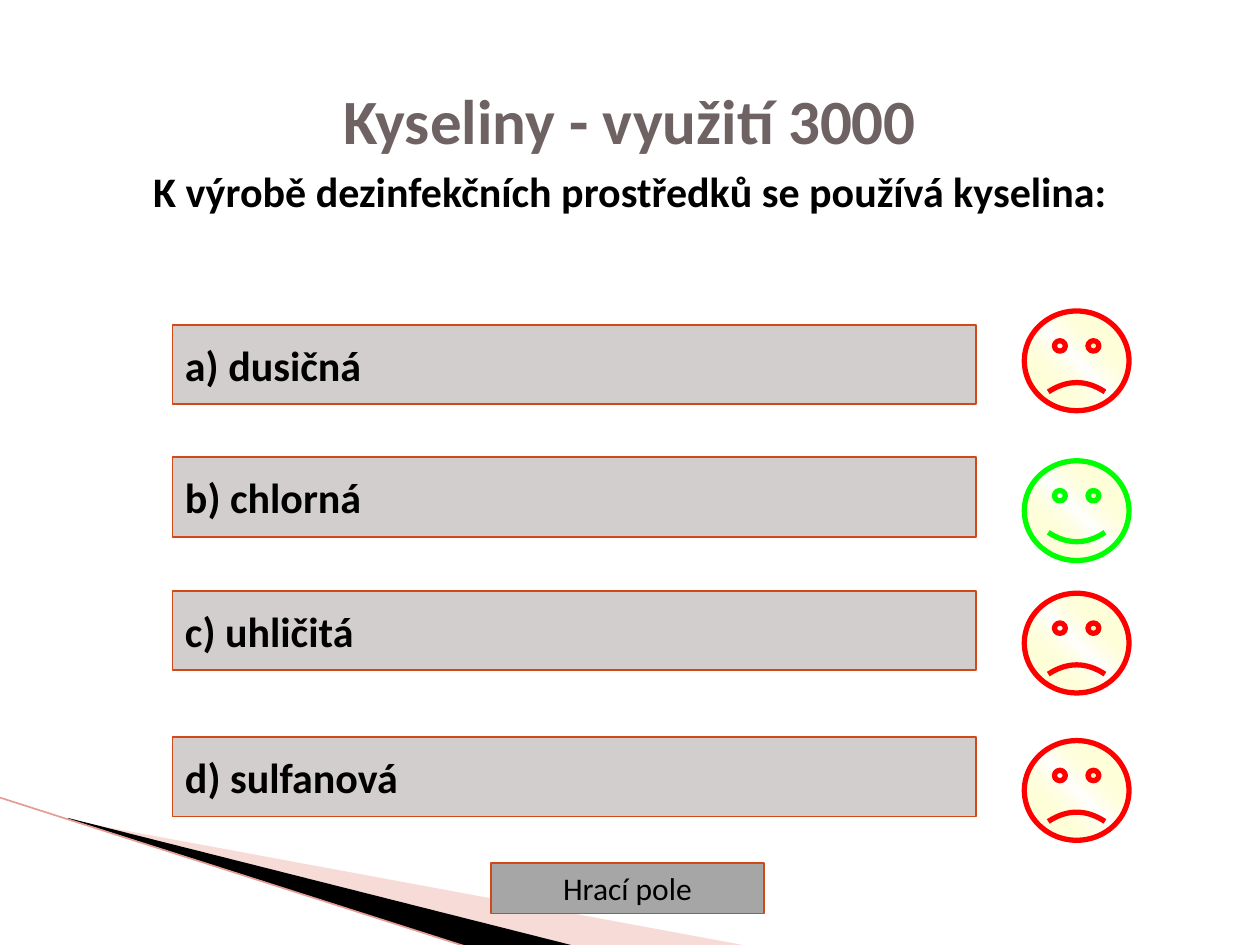
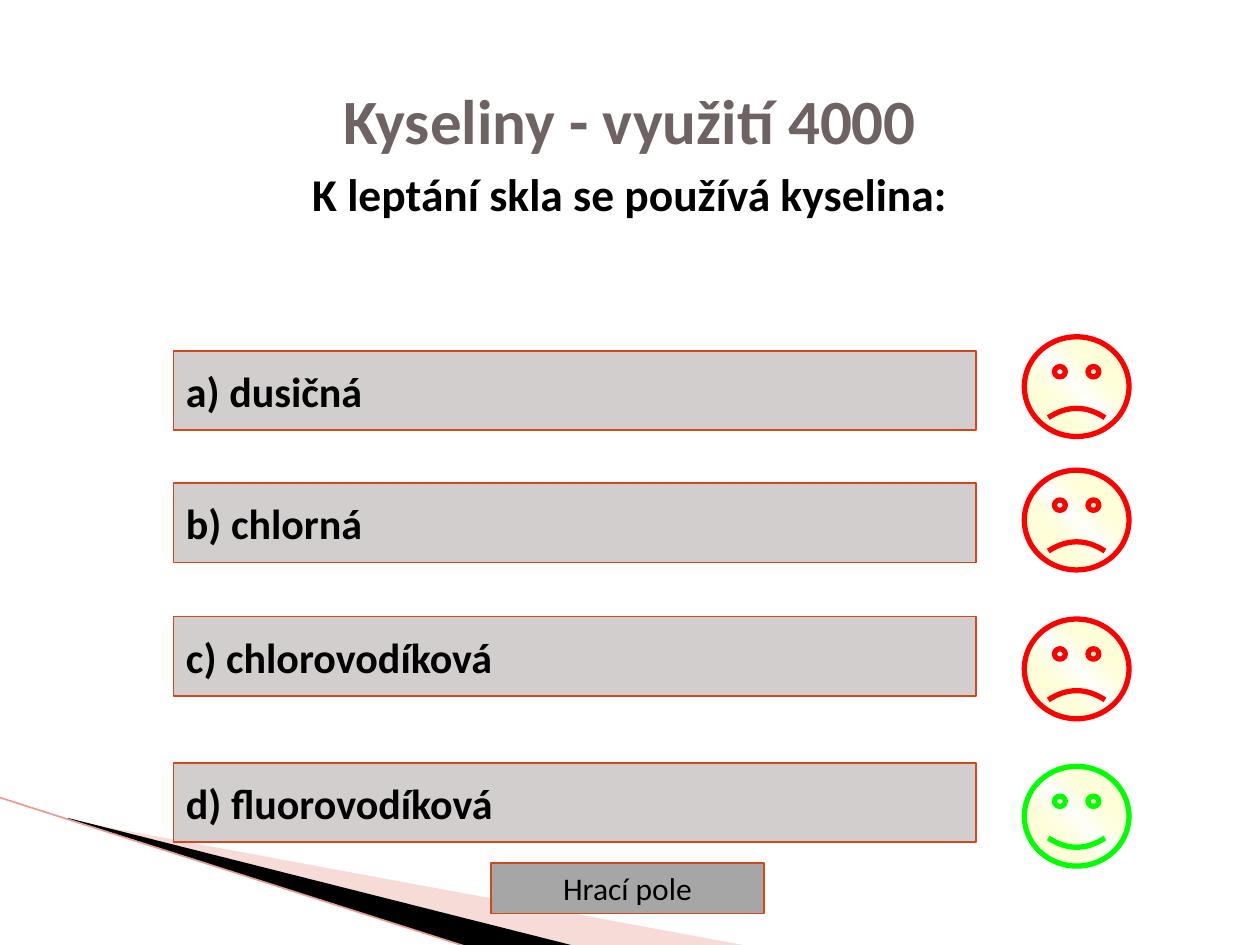
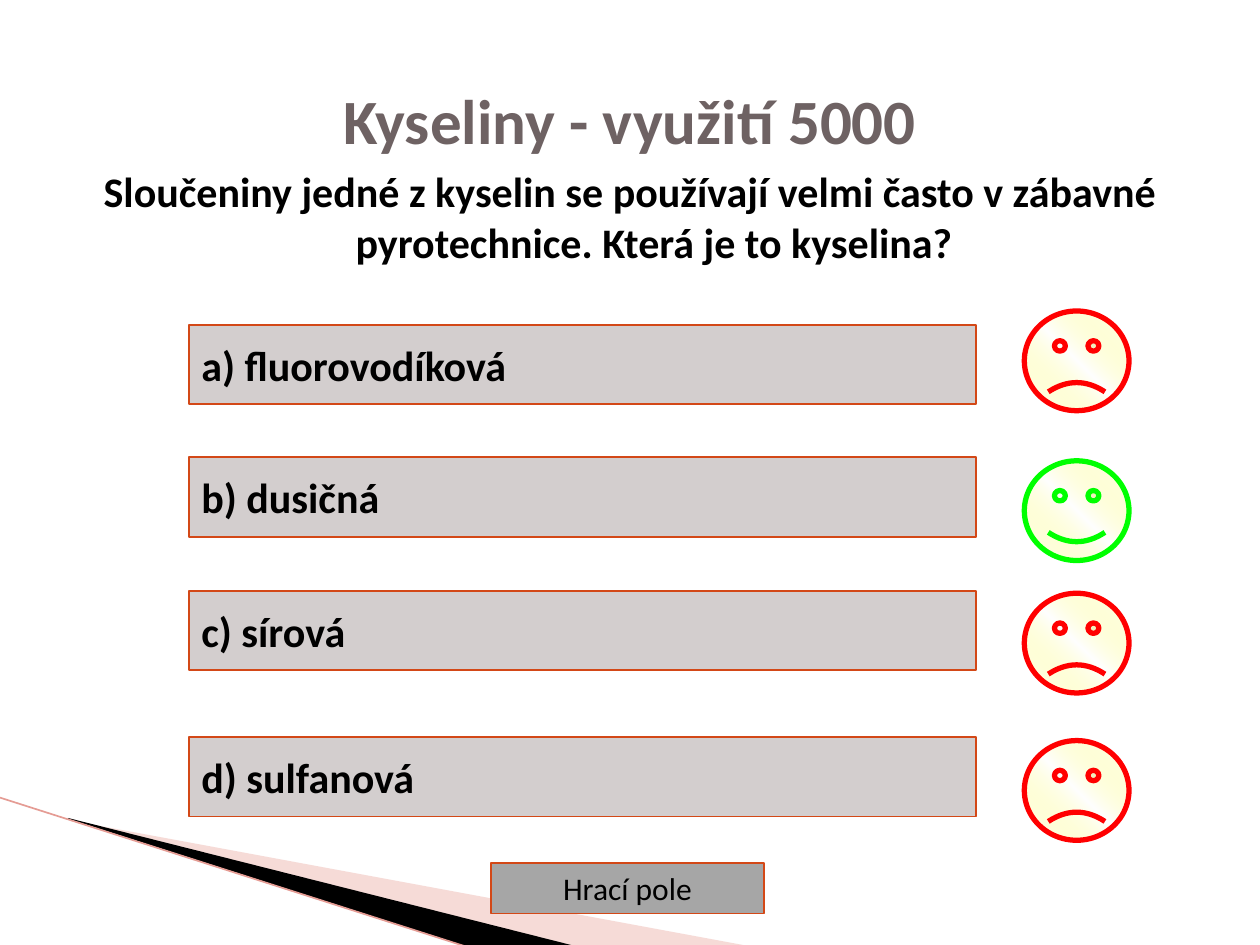
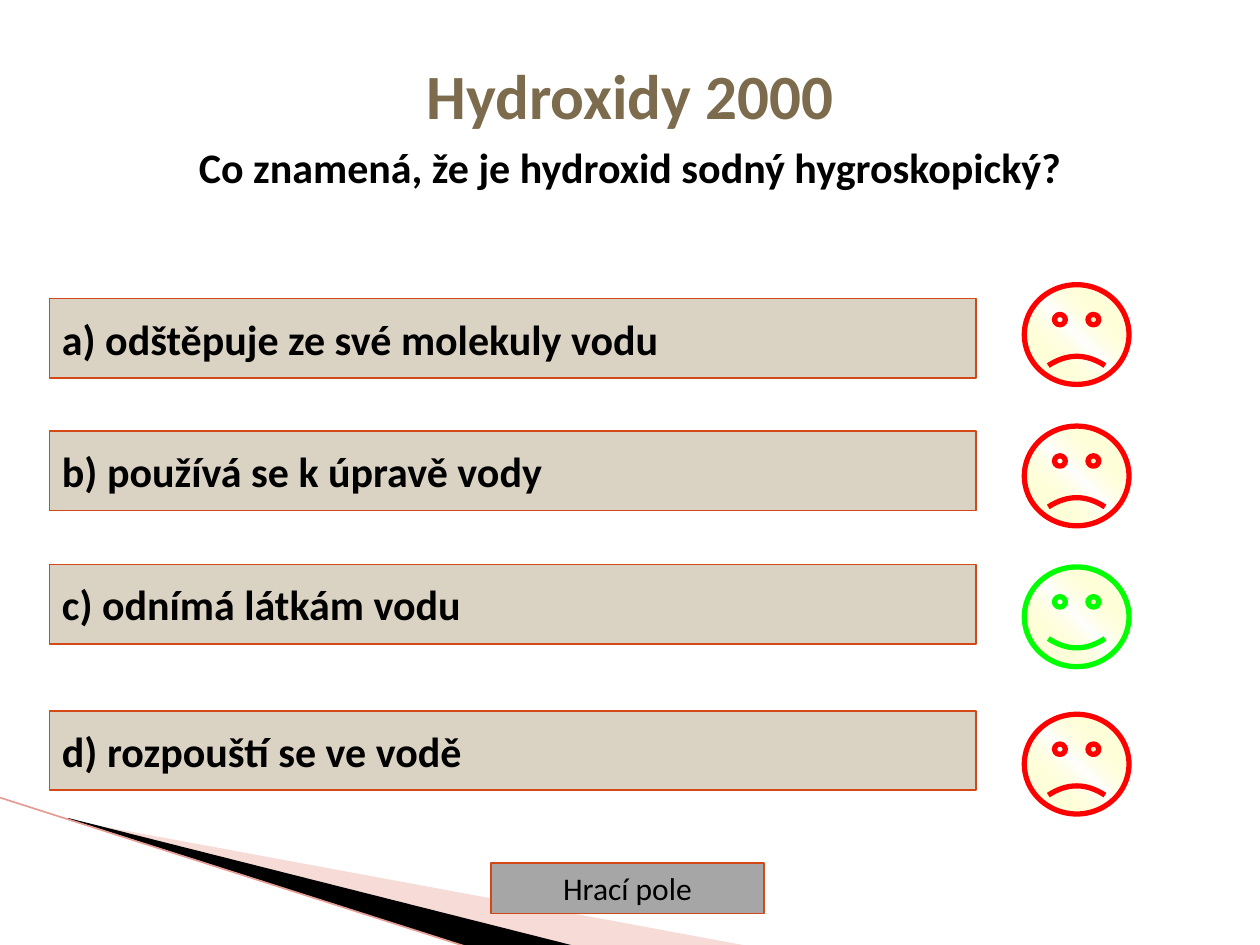
from dataclasses import dataclass

from lxml import etree
from pptx import Presentation
from pptx import util as u
from pptx.dml import color
from pptx.enum import shapes, text
from pptx.oxml import ns

FONT = "Calibri"
BLACK = "000000"
BORDER = "D34817"
RIGHT, WRONG = "00FF00", "FF0000"
GREY_THEME = {"title": "6E6263", "answer": "D3CECE"}
SAND_THEME = {"title": "7C6B4D", "answer": "DAD2C3"}

ROW_TOPS = (0, 2.67, 5.36, 8.31)
ROW_HEIGHT = 1.6
FACE_WIDTH, FACE_HEIGHT = 2.11, 2.01
FACE_GAP = 0.98
INDENT = 0.97


@dataclass
class Box:
    left: float
    top: float
    width: float
    height: float

    def lengths(self):
        return [u.Cm(n) for n in (self.left, self.top, self.width, self.height)]


@dataclass
class Question:
    title: str
    prompt: str
    answers: tuple
    correct: int
    heading_top: float
    answers_left: float
    answers_top: float
    second_face_top: float
    theme: dict
    prompt_size: int = 24


QUESTIONS = (
    Question("Kyseliny - využití 3000",
             "K výrobě dezinfekčních prostředků se používá kyselina:",
             ("a) dusičná", "b) chlorná", "c) uhličitá", "d) sulfanová"),
             1, 1.52, 3.48, 6.55, 2.74, GREY_THEME),
    Question("Kyseliny - využití 4000",
             "K leptání skla se používá kyselina:",
             ("a) dusičná", "b) chlorná", "c) chlorovodíková", "d) fluorovodíková"),
             3, 1.52, 3.5, 7.07, 2.41, GREY_THEME, 26),
    Question("Kyseliny - využití 5000",
             "Sloučeniny jedné z kyselin se používají velmi často v zábavné "
             "pyrotechnice. Která je to kyselina?",
             ("a) fluorovodíková", "b) dusičná", "c) sírová", "d) sulfanová"),
             1, 1.52, 3.81, 6.55, 2.74, GREY_THEME),
    Question("Hydroxidy 2000",
             "Co znamená, že je hydroxid sodný hygroskopický?",
             ("a) odštěpuje ze své molekuly vodu", "b) používá se k úpravě vody",
              "c) odnímá látkám vodu", "d) rozpouští se ve vodě"),
             2, 1.02, 1, 6.02, 2.57, SAND_THEME),
)


def paint(target, hex_color):
    target.rgb = color.RGBColor.from_string(hex_color)


def fill_solid(shape, hex_color):
    shape.fill.solid()
    paint(shape.fill.fore_color, hex_color)


def outline(shape, hex_color, points):
    paint(shape.line.color, hex_color)
    shape.line.width = u.Pt(points)


def write(paragraph, words, size, hex_color=BLACK, bold=False):
    run = paragraph.add_run()
    run.text = words
    for key, value in {"name": FONT, "size": u.Pt(size), "bold": bold}.items():
        setattr(run.font, key, value)
    paint(run.font.color, hex_color)


def add_wedge(slide, box, points, hex_color):
    corners = [(u.Cm(box.left + x), u.Cm(box.top + y)) for x, y in points]
    builder = slide.shapes.build_freeform(*corners[0])
    builder.add_line_segments(corners[1:])
    wedge = builder.convert_to_shape()
    wedge.shadow.inherit = False
    fill_solid(wedge, hex_color)
    wedge.line.fill.background()
    return wedge


def add_corner(slide, box):
    pale = add_wedge(slide, box, ((1.42, 0.46), (15.14, 3), (11.61, 3), (1.42, 0.43)),
                     "E9A59D")
    tint = pale.fill._xPr.find(ns.qn("a:solidFill"))[0]
    etree.SubElement(tint, ns.qn("a:alpha"), val="40000")
    add_wedge(slide, box, ((1.37, 0.41), (11.63, 3), (9.47, 3.02), (1.39, 0.43)), BLACK)
    edge = slide.shapes.add_connector(
        shapes.MSO_CONNECTOR.STRAIGHT, u.Cm(box.left), u.Cm(box.top),
        u.Cm(box.left + 9.45), u.Cm(box.top + 3.02))
    outline(edge, "E59C94", 0.95)
    etree.SubElement(edge._element.spPr, ns.qn("a:effectLst"))


def add_button(slide, box, words, fill, size, align, border_width, bold=False):
    button = slide.shapes.add_shape(shapes.MSO_SHAPE.ACTION_BUTTON_CUSTOM, *box.lengths())
    button.shadow.inherit = False
    fill_solid(button, fill)
    outline(button, BORDER, border_width)
    frame = button.text_frame
    for key, value in {"word_wrap": False,
                       "vertical_anchor": text.MSO_ANCHOR.MIDDLE}.items():
        setattr(frame, key, value)
    frame.paragraphs[0].alignment = align
    write(frame.paragraphs[0], words, size, bold=bold)


def add_face(slide, box, is_correct):
    face = slide.shapes.add_shape(shapes.MSO_SHAPE.SMILEY_FACE, *box.lengths())
    face.shadow.inherit = False
    face.adjustments[0] = 0.047 if is_correct else -0.047
    face.fill.gradient()
    face.fill.gradient_angle = 45
    stops = face.fill._xPr.find(ns.qn("a:gradFill")).find(ns.qn("a:gsLst"))
    for stop in list(stops):
        stops.remove(stop)
    for position, shade in ((0, "FFFFFF"), (50, "FFFF66"), (100, "FFFFFF")):
        stop = etree.SubElement(stops, ns.qn("a:gs"), pos=str(position * 1000))
        tint = etree.SubElement(stop, ns.qn("a:srgbClr"), val=shade)
        if position == 50:
            etree.SubElement(tint, ns.qn("a:alpha"), val="0")
    outline(face, RIGHT if is_correct else WRONG, 3)


def add_heading(slide, box, question):
    frame = slide.shapes.add_textbox(*box.lengths()).text_frame
    frame.word_wrap = True
    title, prompt = frame.paragraphs[0], frame.add_paragraph()
    for paragraph in (title, prompt):
        paragraph.alignment = text.PP_ALIGN.CENTER
        properties = paragraph._p.get_or_add_pPr()
        properties.set("marL", str(u.Cm(INDENT)))
        properties.set("indent", str(-u.Cm(INDENT)))
    prompt.space_before = u.Pt(5)
    write(title, question.title, 36, question.theme["title"], True)
    write(prompt, question.prompt, question.prompt_size, bold=True)


def add_answers(slide, box, question):
    face_left = box.left + box.width + FACE_GAP
    face_tops = (-0.28, question.second_face_top, 5.41, 8.38)
    for index, answer in enumerate(question.answers):
        row = Box(box.left, box.top + ROW_TOPS[index], box.width, ROW_HEIGHT)
        add_button(slide, row, answer, question.theme["answer"], 24,
                   text.PP_ALIGN.LEFT, 1, True)
        face = Box(face_left, box.top + face_tops[index], FACE_WIDTH, FACE_HEIGHT)
        add_face(slide, face, index == question.correct)


def add_question_slide(deck, question):
    slide = deck.slides.add_slide(deck.slide_layouts[6])
    add_corner(slide, Box(0, 16.08, 15.14, 3.02))
    add_button(slide, Box(9.9, 17.4, 5.5, 1.02), "Hrací pole", "A6A6A6", 18,
               text.PP_ALIGN.CENTER, 0.75)
    add_heading(slide, Box(1, question.heading_top, 23.4, 1.9), question)
    answers_width = 19.67 - question.answers_left
    add_answers(slide, Box(question.answers_left, question.answers_top,
                           answers_width, ROW_TOPS[-1] + ROW_HEIGHT), question)


def main():
    deck = Presentation()
    deck.slide_width, deck.slide_height = u.Cm(25.4), u.Cm(19.05)
    for question in QUESTIONS:
        add_question_slide(deck, question)
    deck.save("out.pptx")


if __name__ == "__main__":
    main()
